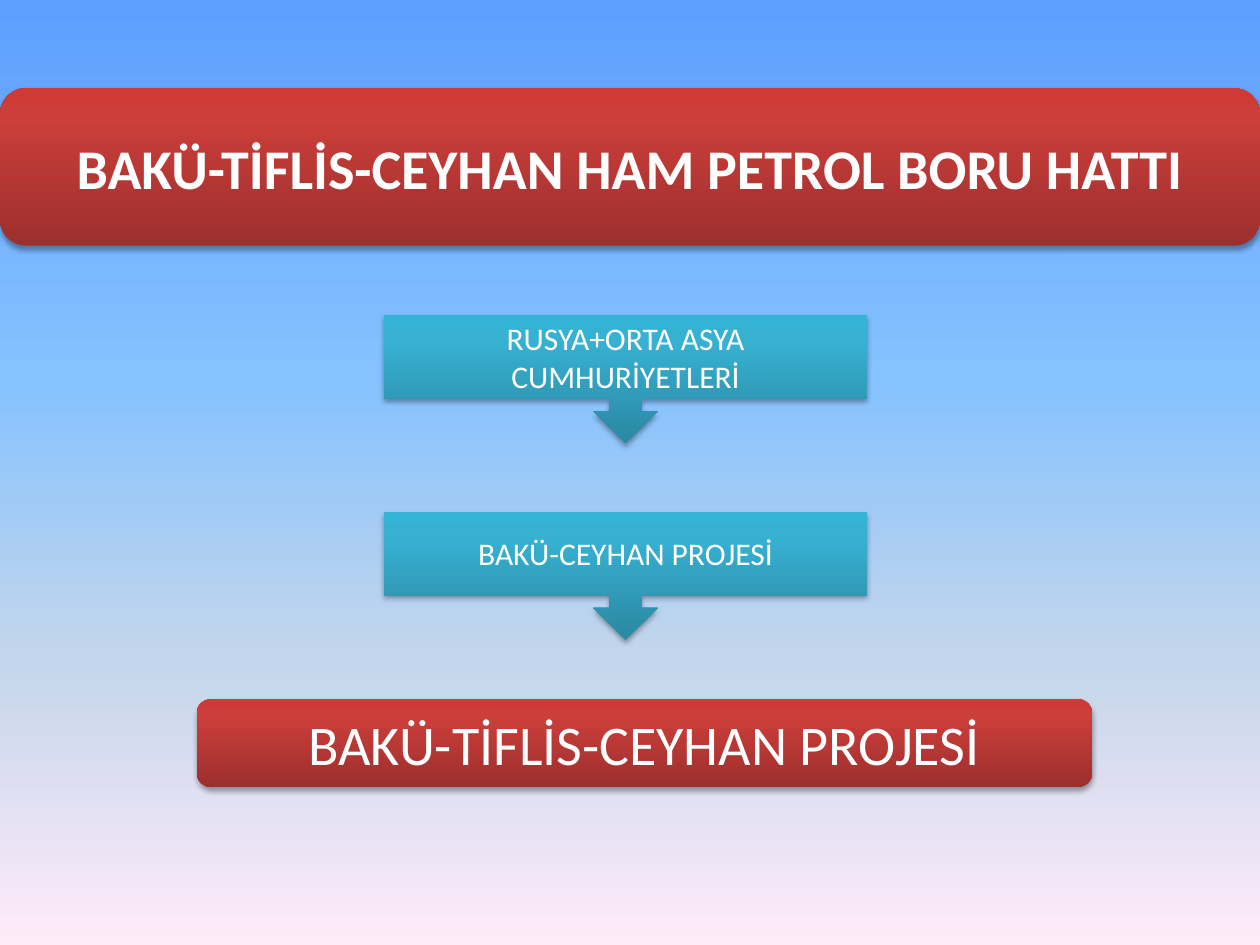
from dataclasses import dataclass

from lxml import etree
from pptx import Presentation
from pptx import util as u
from pptx.dml.color import RGBColor
from pptx.enum import shapes, text
from pptx.oxml import ns


@dataclass(frozen=True)
class Theme:
    font: str = "Calibri"
    ink: str = "FFFFFF"
    shadow: str = "000000"
    title_size: int = 32
    step_size: int = 18
    sky: tuple = ((0, "5E9EFF"), (40, "85C2FF"), (70, "C4D6EB"), (100, "FFEBFA"))
    red: tuple = ((0, "9C2F2D"), (80, "CB3E3A"), (100, "CE3B37"))
    teal: tuple = ((0, "2A88A2"), (80, "37B1D2"), (100, "34B4D6"))


THEME = Theme()


def add_color(parent, value):
    return etree.SubElement(parent, ns.qn("a:srgbClr"), val=value)


def paint_gradient(fill, owner, stops, angle):
    fill.gradient()
    fill.gradient_angle = angle
    stop_list = owner.find(".//" + ns.qn("a:gsLst"))
    for stop in list(stop_list):
        stop_list.remove(stop)
    for percent, value in stops:
        stop = etree.SubElement(stop_list, ns.qn("a:gs"), pos=str(percent * 1000))
        add_color(stop, value)


def cast_shadow(shape):
    shape.shadow.inherit = False
    effects = shape.element.spPr.find(ns.qn("a:effectLst"))
    shadow = etree.SubElement(
        effects, ns.qn("a:outerShdw"), blurRad=str(u.Pt(3.1)),
        dist=str(u.Pt(1.8)), dir="5400000", rotWithShape="0")
    color = add_color(shadow, THEME.shadow)
    etree.SubElement(color, ns.qn("a:alpha"), val="35000")


def add_panel(slide, kind, box, wording, stops, size, bold=False):
    panel = slide.shapes.add_shape(kind, *map(u.Inches, box))
    paint_gradient(panel.fill, panel.element, stops, 90)
    panel.line.fill.background()
    cast_shadow(panel)
    frame = panel.text_frame
    frame.word_wrap = True
    frame.vertical_anchor = text.MSO_ANCHOR.MIDDLE
    frame.text = wording
    paragraph = frame.paragraphs[0]
    paragraph.alignment = text.PP_ALIGN.CENTER
    font = paragraph.runs[0].font
    font.name = THEME.font
    font.size = u.Pt(size)
    font.bold = bold
    font.color.rgb = RGBColor.from_string(THEME.ink)


def add_steps(slide, box, steps, gap):
    left, top, width, height = box
    step_height = (height - gap * (len(steps) - 1)) / len(steps)
    for index, step in enumerate(steps):
        step_box = (left, top + index * (step_height + gap), width, step_height)
        add_panel(slide, shapes.MSO_SHAPE.DOWN_ARROW_CALLOUT, step_box, step,
                  THEME.teal, THEME.step_size)


def add_result(slide, box, wording):
    add_panel(slide, shapes.MSO_SHAPE.ROUNDED_RECTANGLE, box, wording,
              THEME.red, THEME.title_size)


def add_title(slide, box, wording):
    add_panel(slide, shapes.MSO_SHAPE.FLOWCHART_ALTERNATE_PROCESS, box, wording,
              THEME.red, THEME.title_size, bold=True)


def main():
    deck = Presentation()
    deck.slide_width, deck.slide_height = u.Inches(10), u.Inches(7.5)
    slide = deck.slides.add_slide(deck.slide_layouts[6])
    paint_gradient(slide.background.fill, slide.element, THEME.sky, 270)
    add_steps(slide, (3.05, 2.5, 3.83, 2.58),
              ("RUSYA+ORTA ASYA CUMHURİYETLERİ", "BAKÜ-CEYHAN PROJESİ"), gap=0.54)
    add_result(slide, (1.56, 5.55, 7.11, 0.7), "BAKÜ-TİFLİS-CEYHAN PROJESİ")
    add_title(slide, (0, 0.7, 10, 1.25), "BAKÜ-TİFLİS-CEYHAN HAM PETROL BORU HATTI")
    deck.save("out.pptx")


if __name__ == "__main__":
    main()
